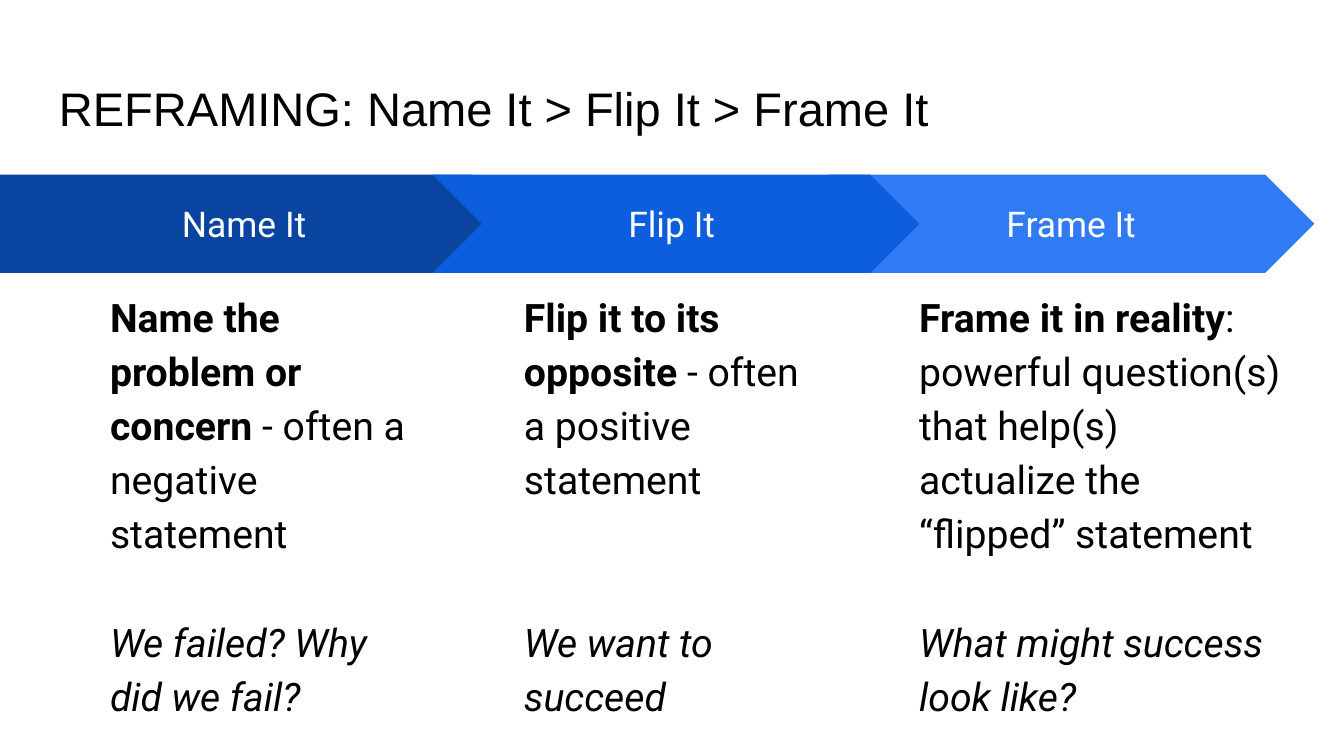
from pptx import Presentation
from pptx import util as u
from pptx.dml.color import RGBColor
from pptx.enum import shapes, text

HUES = {"name": "0944A1", "flip": "0D5DDF", "frame": "307BF3",
        "ink": "000000", "pale": "FFFFFF"}
TITLE = "REFRAMING: Name It > Flip It > Frame It"
STEPS = [
    {"hue": "frame", "label": "Frame It", "left": 6.16, "wide": 2.91, "gap": 1,
     "bold": "Frame it in reality",
     "rest": ": powerful question(s) that help(s) actualize the “flipped” statement",
     "quote": "What might success look like?"},
    {"hue": "name", "label": "Name It ", "left": 0, "wide": 2.45, "gap": 1,
     "bold": "Name the problem or concern",
     "rest": " - often a negative statement",
     "quote": "We failed? Why did we fail?"},
    {"hue": "flip", "label": "Flip It ", "left": 3.22, "wide": 2.45, "gap": 2,
     "bold": "Flip it to its opposite",
     "rest": " - often a positive statement",
     "quote": "We want to succeed"},
]
HEAD = {"name": "Arial", "size": u.Pt(25.2)}
LABEL = {"name": "Roboto", "size": u.Pt(19)}
BODY = {"name": "Roboto", "size": u.Pt(21)}
PAD = u.Inches(0.1)
FRAME = {"word_wrap": True, "margin_left": PAD, "margin_right": PAD,
         "margin_top": PAD, "margin_bottom": PAD}
WIDE = 10
TALL = WIDE * 9 / 16
TOP, HIGH, LINE = 1.3, 0.73, 29


def apply(item, vals):
    for key, val in vals.items():
        setattr(item, key, val)


def color(hue):
    return RGBColor.from_string(HUES[hue])


def write(para, words, hue, vals):
    run = para.add_run()
    run.text = words
    apply(run.font, vals)
    run.font.color.rgb = color(hue)


def add_box(slide, *place):
    box = slide.shapes.add_textbox(*map(u.Inches, place))
    apply(box.text_frame, FRAME)
    return box.text_frame


def add_arrow(slide, step):
    left = step["left"]
    kind, wide = shapes.MSO_SHAPE.CHEVRON, 3.62
    if left == 0:
        kind, wide = shapes.MSO_SHAPE.PENTAGON, 3.88
    arrow = slide.shapes.add_shape(kind, *map(u.Inches, (left, TOP, wide, HIGH)))
    arrow.shadow.inherit = False
    arrow.fill.solid()
    arrow.fill.fore_color.rgb = color(step["hue"])
    arrow.line.fill.background()
    apply(arrow.text_frame, {**FRAME, "vertical_anchor": text.MSO_ANCHOR.MIDDLE})
    para = arrow.text_frame.paragraphs[0]
    para.alignment = text.PP_ALIGN.CENTER
    write(para, step["label"], "pale", LABEL)


def add_notes(slide, step):
    left = step["left"] + 0.58 if step["left"] else 0.72
    frame = add_box(slide, left, TOP + HIGH, step["wide"], 3.08)
    main, quote = frame.paragraphs[0], frame.add_paragraph()
    main.line_spacing = quote.line_spacing = 1.15
    quote.space_before = u.Pt(step["gap"] * LINE)
    write(main, step["bold"], "ink", {**BODY, "bold": True})
    write(main, step["rest"], "ink", BODY)
    write(quote, step["quote"], "ink", {**BODY, "italic": True})


def main():
    deck = Presentation()
    apply(deck, {"slide_width": u.Inches(WIDE), "slide_height": u.Inches(TALL)})
    slide = deck.slides.add_slide(deck.slide_layouts[6])
    title = add_box(slide, 0.34, 0.49, 9.32, 0.63)
    write(title.paragraphs[0], TITLE, "ink", HEAD)
    for step in STEPS:
        add_arrow(slide, step)
        add_notes(slide, step)
    deck.save("out.pptx")


if __name__ == "__main__":
    main()
